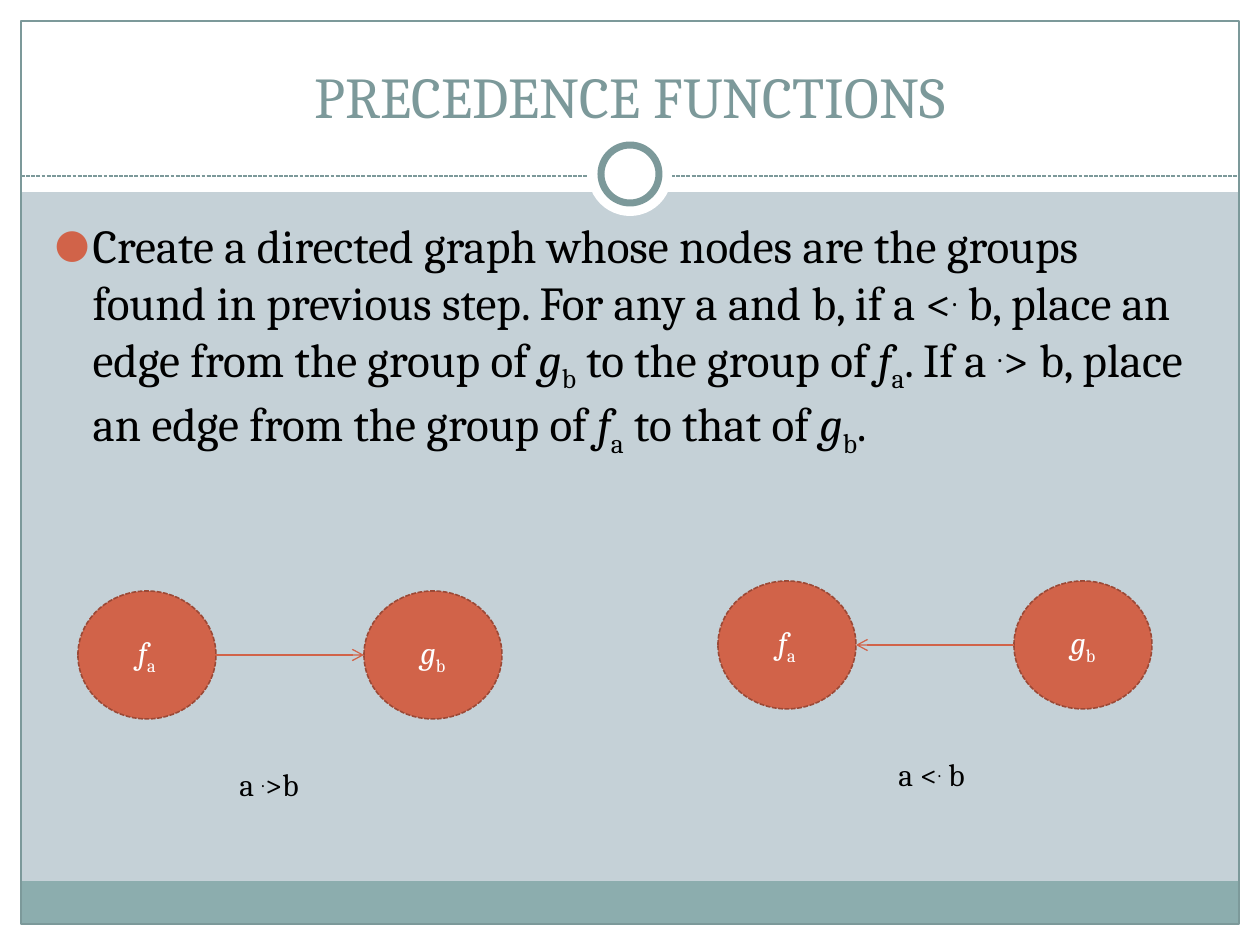
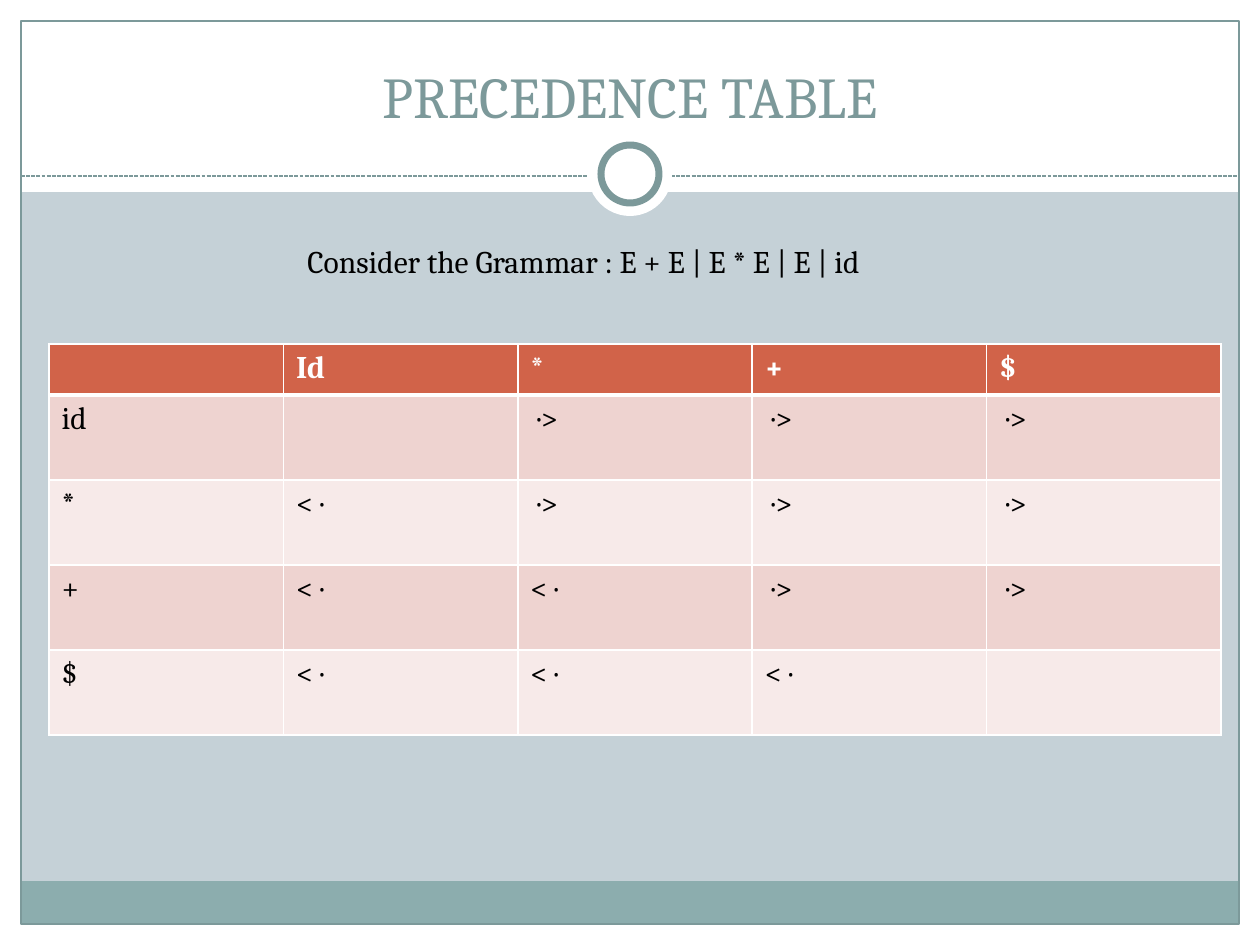
from lxml import etree
from pptx import Presentation
from pptx import util as u
from pptx.dml.color import RGBColor
from pptx.enum import dml, shapes, text
from pptx.oxml.ns import qn

PX = 914400 / 126
W, H = 1260, 945
FONT = "Cambria"
WHITE, BLACK = "FFFFFF", "000000"
GREY, TEAL, SLATE = "C5D1D7", "8CADAE", "7C999A"
RUST, DARK_RUST = "D16349", "9B4936"
ROW_FILLS = ["EED3D0", "F7EAE9"]
BASELINES = {"sup": "30000", "sub": "-25000"}
RECT, OVAL = shapes.MSO_SHAPE.RECTANGLE, shapes.MSO_SHAPE.OVAL

F_A = [("f", "i"), ("a", "sub")]
G_B = [("g", "i"), ("b", "sub")]
LESS = [("<", ""), (".", "sup")]
GREATER = [(".", "sup"), (">", "")]


def rgb(color):
    return RGBColor.from_string(color)


def px(*lengths):
    return [u.Emu(round(n * PX)) for n in lengths]


def sub(parent, tag, **attrs):
    return etree.SubElement(parent, qn(tag), attrs)


def style_line(line, color, width, dashed=False):
    line.color.rgb = rgb(color)
    line.width = u.Pt(width)
    if dashed:
        line.dash_style = dml.MSO_LINE.SQUARE_DOT


def add_shape(s, kind, box, fill=None, line=None):
    sp = s.shapes.add_shape(kind, *px(*box))
    sp.shadow.inherit = False
    if fill:
        sp.fill.solid()
        sp.fill.fore_color.rgb = rgb(fill)
    else:
        sp.fill.background()
    if line:
        style_line(sp.line, *line)
    else:
        sp.line.fill.background()
    return sp


def add_line(s, start, end, color, dashed=False, arrow=False):
    cx = s.shapes.add_connector(shapes.MSO_CONNECTOR.STRAIGHT, *px(*start, *end))
    style_line(cx.line, color, 0.75, dashed)
    if arrow:
        sub(cx.line._get_or_add_ln(), "a:tailEnd", type="arrow")
    sub(cx.element.spPr, "a:effectLst")
    return cx


def write(p, runs, size, color, align=None, bold=None):
    p.font.name = FONT
    p.font.size = u.Pt(size)
    p.font.color.rgb = rgb(color)
    p.font.bold = bold
    p.alignment = align
    for words, style in runs:
        r = p.add_run()
        r.text = words
        if style == "i":
            r.font.italic = True
        elif style:
            r._r.get_or_add_rPr().set("baseline", BASELINES[style])


def place(sp, box):
    sp.left, sp.top, sp.width, sp.height = px(*box)
    sp.text_frame.auto_size = text.MSO_AUTO_SIZE.NONE


def add_label(s, box, runs, wrap=True):
    sp = s.shapes.add_textbox(*px(*box))
    tf = sp.text_frame
    tf.word_wrap = wrap
    tf.auto_size = text.MSO_AUTO_SIZE.SHAPE_TO_FIT_TEXT
    write(tf.paragraphs[0], runs, 18, BLACK)


def build_frame(prs, s):
    edge, rule_y, ring_y = 21, 176, 174
    parts = [add_shape(s, RECT, box, WHITE) for box in (
        (0, H - edge, W, edge), (0, 0, W, 192),
        (0, 0, edge, H), (W - edge, 0, edge, H))]
    parts.append(add_shape(s, RECT, (edge, 881, W - 2 * edge, 43), TEAL))
    parts.append(add_shape(s, RECT, (edge, edge, W - 2 * edge, H - 2 * edge),
                           line=(SLATE, 0.75)))
    parts.append(add_line(s, (edge, rule_y), (W - edge, rule_y), SLATE, dashed=True))
    for size, line in ((84, None), (58, (SLATE, 4))):
        box = ((W - size) // 2, ring_y - size // 2, size, size)
        parts.append(add_shape(s, OVAL, box, WHITE, line))
    master = prs.slide_master
    master.background.fill.solid()
    master.background.fill.fore_color.rgb = rgb(GREY)
    for i, part in enumerate(parts):
        part.element.xpath("./*/p:cNvPr")[0].set("id", str(101 + i))
        master.shapes.element.insert(2 + i, part.element)


def set_title(s, words):
    title = s.shapes.title
    place(title, (42, 32, 1176, 104))
    title.text_frame.vertical_anchor = text.MSO_ANCHOR.BOTTOM
    write(title.text_frame.paragraphs[0], [(words, "")], 33, SLATE, text.PP_ALIGN.CENTER)


def set_body(s, box, runs):
    body = s.placeholders[1]
    place(body, box)
    p = body.text_frame.paragraphs[0]
    write(p, runs, 27, BLACK)
    pPr = p._p.get_or_add_pPr()
    indent = px(38)[0]
    pPr.set("marL", str(indent))
    pPr.set("indent", str(-indent))
    bullet = [etree.Element(qn(tag)) for tag in ("a:buClr", "a:buSzPct", "a:buFont", "a:buChar")]
    sub(bullet[0], "a:srgbClr", val=RUST)
    bullet[1].set("val", "85000")
    bullet[2].set("typeface", FONT)
    bullet[3].set("char", "●")
    for el in bullet:
        pPr.find(qn("a:defRPr")).addprevious(el)


def add_edge_diagram(s, left, top, step, forward, label_box, label):
    w, h = 138, 128
    for i, runs in enumerate((F_A, G_B)):
        node = add_shape(s, OVAL, (left + i * step, top, w, h), RUST, (DARK_RUST, 0.9, True))
        node.text_frame.vertical_anchor = text.MSO_ANCHOR.MIDDLE
        write(node.text_frame.paragraphs[0], runs, 18, WHITE, text.PP_ALIGN.CENTER)
    ends = [(left + w, top + h // 2), (left + step, top + h // 2)]
    add_line(s, *(ends if forward else ends[::-1]), RUST, arrow=True)
    dx, dy, label_w, label_h = label_box
    add_label(s, (left + dx, top + dy, label_w, label_h), label)


def set_borders(cell, bottom):
    tcPr = cell._tc.get_or_add_tcPr()
    widths = {"a:lnL": 1, "a:lnR": 1, "a:lnT": 1, "a:lnB": bottom}
    for i, (tag, width) in enumerate(widths.items()):
        ln = etree.Element(qn(tag), w=str(u.Pt(width)))
        sub(sub(ln, "a:solidFill"), "a:srgbClr", val=WHITE)
        tcPr.insert(i, ln)


def add_relation_table(s, left, top, width, rows):
    head_h, row_h = 51, 85
    height = head_h + row_h * (len(rows) - 1)
    tbl = s.shapes.add_table(len(rows), len(rows[0]), *px(left, top, width, height)).table
    for i, row in enumerate(rows):
        head = i == 0
        tbl.rows[i].height = px(head_h if head else row_h)[0]
        for j, words in enumerate(row):
            cell = tbl.cell(i, j)
            cell.fill.solid()
            cell.fill.fore_color.rgb = rgb(RUST if head else ROW_FILLS[(i - 1) % 2])
            set_borders(cell, 3 if head else 1)
            write(cell.text_frame.paragraphs[0], [(words, "")] if words else [],
                  18, WHITE if head else BLACK, bold=head)


def build_functions_slide(s):
    set_title(s, "PRECEDENCE FUNCTIONS")
    set_body(s, (42, 210, 1172, 630), [
        ("Create a directed graph whose nodes are the groups found in previous step. "
         "For any a and b, if a ", ""), *LESS,
        ("\u00a0b, place an edge from the group of\u00a0".replace("\u00a0", " "), ""), *G_B,
        (" to the group of ", ""), *F_A, (". If a ", ""), *GREATER,
        (" b, place an edge from the group of ", ""), *F_A,
        (" to that of ", ""), *G_B, (".", "")])
    add_edge_diagram(s, 78, 591, 286, True, (149, 168, 98, 50),
                     [("a ", ""), *GREATER, ("b", "")])
    add_edge_diagram(s, 718, 581, 296, False, (168, 168, 118, 50),
                     [("a ", ""), *LESS, (" b", "")])


def build_table_slide(s):
    set_title(s, "PRECEDENCE TABLE")
    less, greater = "< ·", " ·>"
    add_relation_table(s, 49, 344, 1172, [
        ["", "Id", "*", "+", "$"],
        ["id", "", greater, greater, greater],
        ["*", less, greater, greater, greater],
        ["+", less, less, greater, greater],
        ["$", less, less, less, ""]])
    add_label(s, (295, 236, 655, 50),
              [("Consider the Grammar : E + E | E * E | E | id", "")], wrap=False)


def main():
    prs = Presentation()
    prs.slide_width, prs.slide_height = px(W, H)
    functions = prs.slides.add_slide(prs.slide_layouts[1])
    build_frame(prs, functions)
    build_functions_slide(functions)
    build_table_slide(prs.slides.add_slide(prs.slide_layouts[5]))
    prs.save("out.pptx")


if __name__ == "__main__":
    main()
